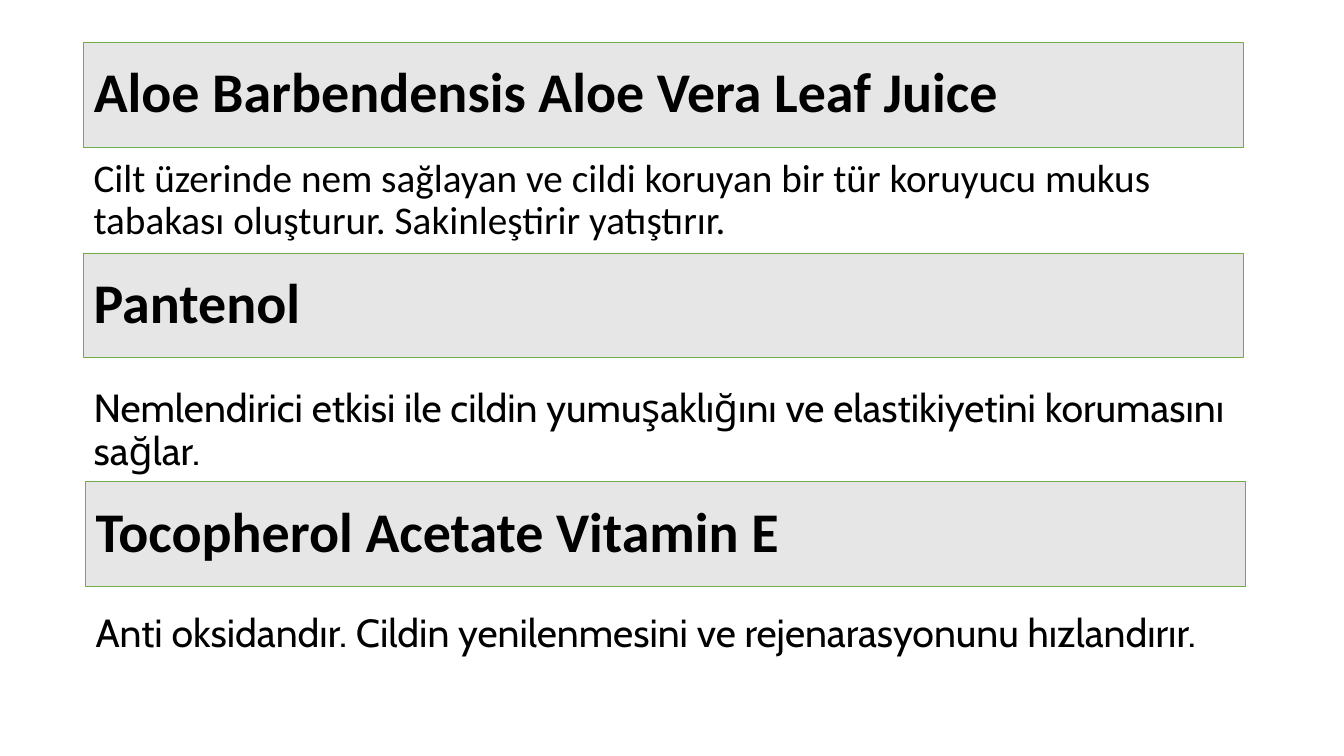
from pptx import Presentation
from pptx import util as u
from pptx.dml import color
from pptx.enum import shapes, text

WIDTH, HEIGHT = 13.33, 7.5
COLORS = {"band": "E7E6E6", "edge": "70AD47", "ink": "000000"}
BLOCK_WIDTH = 11.5 / WIDTH
BAND_HEIGHT = 1.04 / HEIGHT
LEFT = 0.83 / WIDTH
LAST_LEFT = 0.85 / WIDTH

INGREDIENTS = [
    dict(name="Aloe Barbendensis Aloe Vera Leaf Juice",
         effect="Cilt üzerinde nem sağlayan ve cildi koruyan bir tür koruyucu mukus "
                "tabakası oluşturur. Sakinleştirir yatıştırır.",
         left=LEFT, band_top=0.42 / HEIGHT, effect_top=1.52 / HEIGHT,
         effect_height=1.32 / HEIGHT, font="Calibri", spacing=0.9),
    dict(name="Pantenol",
         effect="Nemlendirici etkisi ile cildin yumuşaklığını ve elastikiyetini "
                "korumasını sağlar.",
         left=LEFT, band_top=2.51 / HEIGHT, effect_top=3.81 / HEIGHT,
         effect_height=0.93 / HEIGHT, font="Cabin", spacing=0.9),
    dict(name="Tocopherol Acetate Vitamin E",
         effect="Anti oksidandır. Cildin yenilenmesini ve rejenarasyonunu hızlandırır.",
         left=LAST_LEFT, band_top=4.78 / HEIGHT, effect_top=6.08 / HEIGHT,
         effect_height=0.93 / HEIGHT, font="Cabin", spacing=0.8),
]


def rgb(name):
    return color.RGBColor.from_string(COLORS[name])


def area(left, top, height):
    return (u.Inches(left * WIDTH), u.Inches(top * HEIGHT),
            u.Inches(BLOCK_WIDTH * WIDTH), u.Inches(height * HEIGHT))


def write(box, words, *, size, font, bold=False, spacing=0.9, before=0,
          anchor=text.MSO_ANCHOR.TOP):
    frame = box.text_frame
    frame.word_wrap = True
    frame.auto_size = text.MSO_AUTO_SIZE.NONE
    frame.vertical_anchor = anchor
    para = frame.paragraphs[0]
    para.alignment = text.PP_ALIGN.LEFT
    para.line_spacing = spacing
    para.space_before = u.Pt(before)
    span = para.add_run()
    span.text = words
    span.font.size = u.Pt(size)
    span.font.name = font
    span.font.bold = bold
    span.font.color.rgb = rgb("ink")


def format_band(band, name):
    band.fill.solid()
    band.fill.fore_color.rgb = rgb("band")
    band.line.color.rgb = rgb("edge")
    band.line.width = u.Pt(0.5)
    write(band, name, size=40, font="Calibri", bold=True,
          anchor=text.MSO_ANCHOR.MIDDLE)


def add_title_band(page, place, name):
    title = page.shapes.title
    title.left, title.top, title.width, title.height = place
    format_band(title, name)


def add_band(page, place, name):
    band = page.shapes.add_shape(shapes.MSO_SHAPE.RECTANGLE, *place)
    band.shadow.inherit = False
    format_band(band, name)


def add_effect(page, place, words, font, spacing):
    box = page.shapes.add_textbox(*place)
    write(box, words, size=28, font=font, spacing=spacing, before=10)


def main():
    deck = Presentation()
    deck.slide_width, deck.slide_height = u.Inches(WIDTH), u.Inches(HEIGHT)
    page = deck.slides.add_slide(deck.slide_layouts[5])
    for index, item in enumerate(INGREDIENTS):
        draw_band = add_band if index else add_title_band
        draw_band(page, area(item["left"], item["band_top"], BAND_HEIGHT), item["name"])
        add_effect(page, area(item["left"], item["effect_top"], item["effect_height"]),
                   item["effect"], item["font"], item["spacing"])
    deck.save("out.pptx")


if __name__ == "__main__":
    main()
